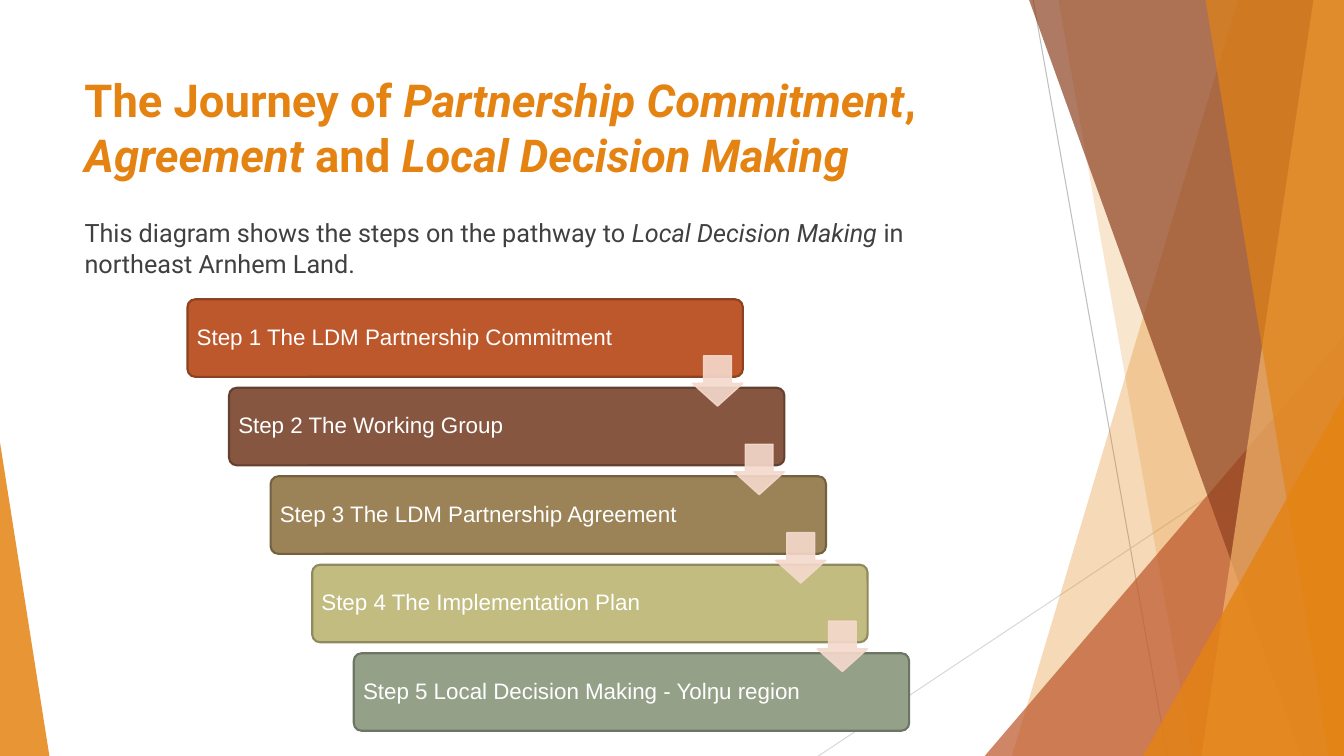
from lxml import etree
from pptx import Presentation
from pptx import util as u
from pptx.dml.color import RGBColor
from pptx.enum import shapes, text
from pptx.oxml.ns import qn

THEME = {
    "heading_font": "Roboto", "step_font": "Arial",
    "title_size": 32.4, "intro_size": 18, "step_size": 16,
    "accent": "E48312", "body": "404040", "step_text": "FFFFFF",
    "rust": "BD582C", "brown": "8E4221", "apricot": "F3B56C",
    "arrow": "F5D9CC", "dark_ray": "BFBFBF", "pale_ray": "D9D9D9",
}
WIDTH, HEIGHT = 960, 540

TITLE = [
    ("The Journey of ", False), ("Partnership Commitment", True), (", ", False),
    ("Agreement", True), (" and ", False), ("Local Decision Making", True),
]
INTRO = [
    ("This diagram shows the steps on the pathway to ", False),
    ("Local Decision Making", True),
    (" in northeast Arnhem Land.", False),
]
STEPS = [
    ("Step 1 The LDM Partnership Commitment", "BD582C", "8C4121"),
    ("Step 2 The Working Group", "865640", "63402F"),
    ("Step 3 The LDM Partnership Agreement", "9B8357", "736140"),
    ("Step 4 The Implementation Plan", "C2BC80", "908B5F"),
    ("Step 5 Local Decision Making - Yolŋu region", "94A088", "6D7665"),
]
RAYS = [
    ((738, 0, 833.8, HEIGHT), "dark_ray"),
    ((WIDTH, 290.2, 584.6, HEIGHT), "pale_ray"),
]
FACETS = [
    ("band", (884.2, 722.9), "accent", 30),
    ("band", (756, 851.8), "accent", 20),
    ("corner", (703.4, 239.8, WIDTH, 1), "rust", 72),
    ("band", (735.1, 929.5), "brown", 70),
    ("band", (938.2, 858.2), "apricot", 70),
    ("band", (861.1, 949), "accent", 65),
    ("corner", (816.5, 283, WIDTH, 1), "accent", 80),
    ("corner", (0, 316.1, 35.3, 0), "accent", 85),
]
BAR_LEFT, BAR_TOP, BAR_WIDTH, BAR_HEIGHT = 133.9, 213.8, 396.7, 55.4
SHIFT_X, SHIFT_Y = 29.7, 63.2
ARROW_SIZE, ARROW_DROP = 36, 40.3


def paint(color_format, color, opacity=100):
    color_format.rgb = RGBColor.from_string(color)


def fade(part, opacity):
    for color in part._element.spPr.iter(qn("a:srgbClr")):
        etree.SubElement(color, qn("a:alpha"), val=str(opacity * 1000))


def style(part, fill, outline=None, weight=1):
    part.shadow.inherit = False
    part.fill.solid()
    paint(part.fill.fore_color, fill)
    if outline:
        paint(part.line.color, outline)
        part.line.width = u.Pt(weight)
    else:
        part.line.fill.background()


def write(paragraph, runs, font, size, color, bold=False):
    for words, italic in runs:
        run = paragraph.add_run()
        run.text = words
        run.font.name = font
        run.font.size = u.Pt(size)
        run.font.bold = bold
        run.font.italic = italic
        paint(run.font.color, color)


def add_ray(slide, ends, color):
    ray = slide.shapes.add_connector(
        shapes.MSO_CONNECTOR.STRAIGHT, *map(u.Pt, ends))
    paint(ray.line.color, color)
    ray.line.width = u.Pt(0.75)
    etree.SubElement(ray._element.spPr, qn("a:effectLst"))


def add_facet(slide, kind, geometry, color, opacity):
    if kind == "band":
        top_x, bottom_x = geometry
        outline = slide.shapes.build_freeform(u.Pt(top_x), 0)
        outline.add_line_segments([
            (u.Pt(x), u.Pt(y)) for x, y in
            [(WIDTH, 0), (WIDTH, HEIGHT), (bottom_x, HEIGHT)]])
        facet = outline.convert_to_shape()
    else:
        left, top, right, apex = geometry
        facet = slide.shapes.add_shape(
            shapes.MSO_SHAPE.ISOSCELES_TRIANGLE,
            *map(u.Pt, (left, top, right - left, HEIGHT - top)))
        facet.adjustments[0] = apex
    style(facet, color)
    fade(facet, opacity)


def add_heading(slide, box, runs, size, color, bold=False, before=0):
    frame = slide.shapes.add_textbox(*map(u.Pt, box)).text_frame
    frame.word_wrap = True
    paragraph = frame.paragraphs[0]
    paragraph.space_before = u.Pt(before)
    write(paragraph, runs, THEME["heading_font"], size, color, bold)


def add_step(slide, index, label, fill, outline):
    bar = slide.shapes.add_shape(
        shapes.MSO_SHAPE.ROUNDED_RECTANGLE,
        u.Pt(BAR_LEFT + index * SHIFT_X), u.Pt(BAR_TOP + index * SHIFT_Y),
        u.Pt(BAR_WIDTH), u.Pt(BAR_HEIGHT))
    bar.adjustments[0] = 0.1
    style(bar, fill, outline, 1.5)
    frame = bar.text_frame
    frame.word_wrap = True
    frame.vertical_anchor = text.MSO_ANCHOR.MIDDLE
    frame.margin_left = frame.margin_right = u.Pt(5)
    frame.margin_top = frame.margin_bottom = u.Pt(5)
    paragraph = frame.paragraphs[0]
    paragraph.alignment = text.PP_ALIGN.LEFT
    paragraph.line_spacing = 0.9
    write(paragraph, [(label, False)], THEME["step_font"],
          THEME["step_size"], THEME["step_text"])


def add_arrow(slide, index):
    arrow = slide.shapes.add_shape(
        shapes.MSO_SHAPE.DOWN_ARROW,
        u.Pt(BAR_LEFT + BAR_WIDTH - ARROW_SIZE + index * SHIFT_X),
        u.Pt(BAR_TOP + ARROW_DROP + index * SHIFT_Y),
        u.Pt(ARROW_SIZE), u.Pt(ARROW_SIZE))
    arrow.adjustments[0] = 0.55
    arrow.adjustments[1] = 0.45
    style(arrow, THEME["arrow"], THEME["arrow"])
    fade(arrow, 90)


def main():
    deck = Presentation()
    deck.slide_width, deck.slide_height = u.Pt(WIDTH), u.Pt(HEIGHT)
    slide = deck.slides.add_slide(deck.slide_layouts[6])
    for ends, color in RAYS:
        add_ray(slide, ends, THEME[color])
    for kind, geometry, color, opacity in FACETS:
        add_facet(slide, kind, geometry, THEME[color], opacity)
    add_heading(slide, (53.3, 48.2, 676.8, 103.7), TITLE,
                THEME["title_size"], THEME["accent"], bold=True)
    for index, step in enumerate(STEPS):
        add_step(slide, index, *step)
    for index in range(len(STEPS) - 1):
        add_arrow(slide, index)
    add_heading(slide, (53.3, 151.9, 663.1, 305.3), INTRO,
                THEME["intro_size"], THEME["body"], before=10)
    deck.save("out.pptx")


if __name__ == "__main__":
    main()
